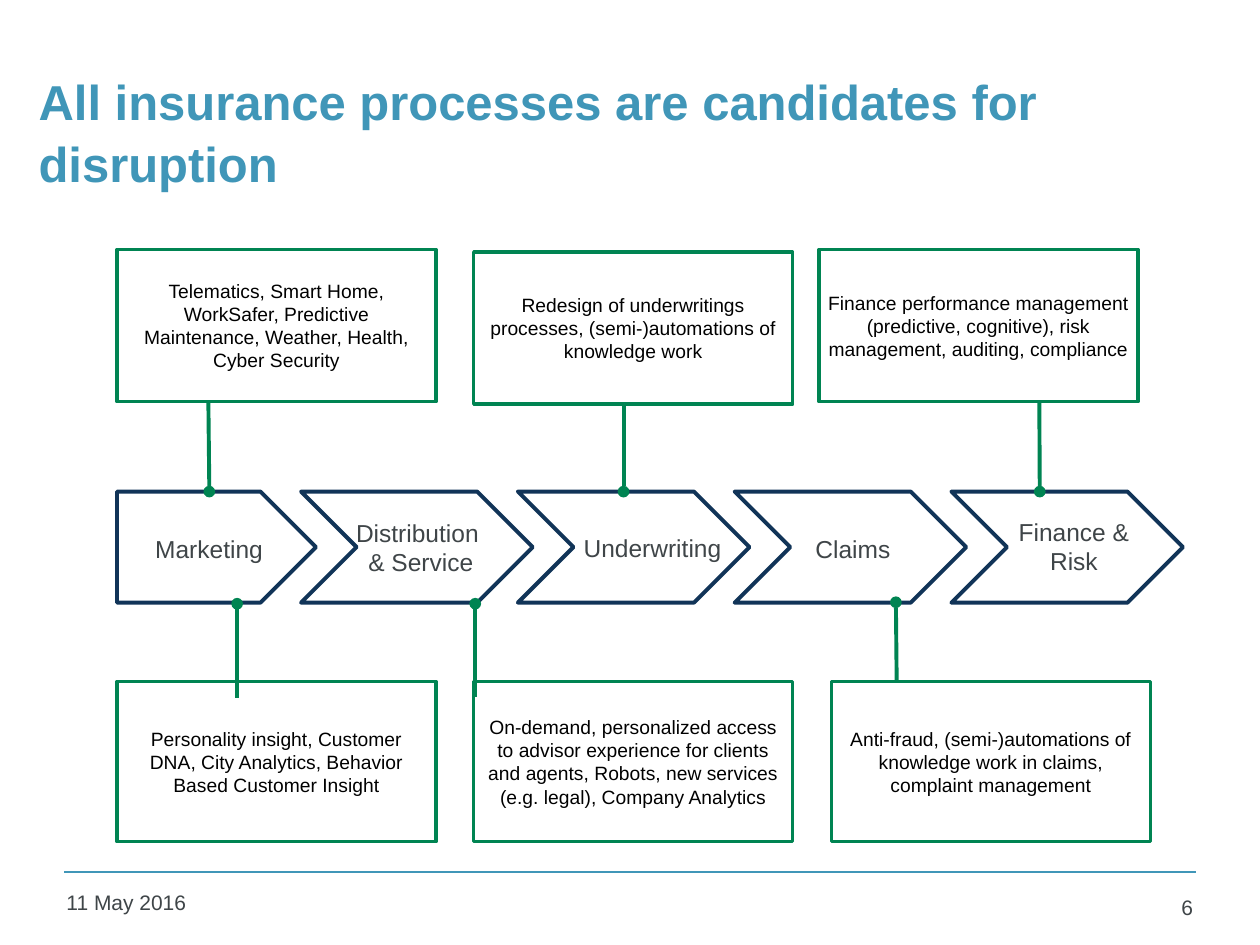
from lxml import etree
from pptx import Presentation
from pptx.dml.color import RGBColor
from pptx.enum.shapes import MSO_CONNECTOR, MSO_SHAPE
from pptx.enum.text import MSO_ANCHOR, PP_ALIGN
from pptx.oxml.ns import qn
from pptx.util import Cm, Pt

STRAIGHT = MSO_CONNECTOR.STRAIGHT
RECTANGLE, PENTAGON, CHEVRON = MSO_SHAPE.RECTANGLE, MSO_SHAPE.PENTAGON, MSO_SHAPE.CHEVRON
TOP, MIDDLE = MSO_ANCHOR.TOP, MSO_ANCHOR.MIDDLE
LEFT, CENTER, RIGHT = PP_ALIGN.LEFT, PP_ALIGN.CENTER, PP_ALIGN.RIGHT

COLORS = {"white": "FFFFFF", "black": "000000", "gray": "3F4548",
          "blue": "4096B8", "navy": "113458", "green": "008452"}
FONT = "Arial"

# All places are in centimetres.
TITLE = "All insurance processes are candidates for disruption"
DATE, PAGE = "11 May 2016", "6"

# Process steps: label lines, label box (left, top, width, height)
STEPS = [
    (["Marketing"], (2.36, 10.64, 3.71, 0.86)),
    (["Distribution ", "& Service"], (6.76, 10.31, 3.45, 1.45)),
    (["Underwriting"], (11.43, 10.62, 3.45, 0.86)),
    (["Claims"], (15.47, 10.64, 3.45, 0.86)),
    (["Finance & Risk"], (20.14, 10.29, 3.02, 1.45)),
]
STEP_TOP, STEP_HEIGHT = 9.91, 2.24
FIRST_LEFT, FIRST_WIDTH = 2.36, 4.01
CHEVRON_LEFT, CHEVRON_WIDTH, CHEVRON_PITCH = 6.07, 4.67, 4.37

# Ideas: text, left, top
IDEA_WIDTH = 6.43
UPPER_HEIGHT, LOWER_HEIGHT = 3.07, 3.23
UPPER_IDEAS = [
    ("Telematics, Smart Home, WorkSafer, Predictive Maintenance, Weather, "
     "Health, Cyber Security", 2.36, 5.03),
    ("Redesign of underwritings processes, (semi-)automations of knowledge work",
     9.55, 5.08),
    ("Finance performance management (predictive, cognitive), risk management, "
     "auditing, compliance", 16.51, 5.03),
]
LOWER_IDEAS = [
    ("Personality insight, Customer DNA, City Analytics, Behavior Based "
     "Customer Insight", 2.36, 13.74),
    ("On-demand, personalized access to advisor experience for clients and "
     "agents, Robots, new services (e.g. legal), Company Analytics", 9.55, 13.74),
    ("Anti-fraud, (semi-)automations of knowledge work in claims, complaint "
     "management", 16.76, 13.74),
]

# Links from idea to step: start x, start y, end x, end y
LINKS_BEHIND = [(18.08, 14.05, 18.06, 12.14), (12.57, 7.72, 12.57, 9.91),
                (20.95, 7.82, 20.96, 9.91), (4.19, 7.16, 4.22, 9.91)]
LINKS_IN_FRONT = [(4.78, 14.07, 4.78, 12.17), (9.58, 14.05, 9.58, 12.17)]


def rgb(color):
    return RGBColor.from_string(COLORS[color])


def write(shape, lines, size, color, align=CENTER, anchor=MIDDLE, bold=False,
          spacing=1.0, inset=(0.25, 0.13)):
    frame = shape.text_frame
    across, down = (Cm(length) for length in inset)
    frame_format = {"word_wrap": True, "vertical_anchor": anchor,
                    "margin_left": across, "margin_right": across,
                    "margin_top": down, "margin_bottom": down}
    for name, value in frame_format.items():
        setattr(frame, name, value)
    for number, line in enumerate(lines):
        paragraph = frame.add_paragraph() if number else frame.paragraphs[0]
        paragraph.alignment = align
        paragraph.line_spacing = spacing
        run = paragraph.add_run()
        run.text = line
        for name, value in {"name": FONT, "size": Pt(size), "bold": bold}.items():
            setattr(run.font, name, value)
        run.font.color.rgb = rgb(color)


def add_text(slide, place, lines, size, color, **text_format):
    box = slide.shapes.add_textbox(*map(Cm, place))
    write(box, lines, size, color, **text_format)


def add_outlined(slide, preset, place, color, width):
    shape = slide.shapes.add_shape(preset, *map(Cm, place))
    shape.shadow.inherit = False
    shape.fill.solid()
    shape.fill.fore_color.rgb = rgb("white")
    shape.line.color.rgb = rgb(color)
    shape.line.width = Pt(width)
    return shape


def add_line(slide, ends, color, width, dot=False):
    """Draw a straight line, with a round dot at its end if asked."""
    line = slide.shapes.add_connector(STRAIGHT, *map(Cm, ends))
    line.line.color.rgb = rgb(color)
    line.line.width = Pt(width)
    properties = line._element.spPr
    if dot:
        etree.SubElement(properties.find(qn("a:ln")), qn("a:tailEnd"), type="oval")
    etree.SubElement(properties, qn("a:effectLst"))


def add_steps(slide):
    add_outlined(slide, PENTAGON, (FIRST_LEFT, STEP_TOP, FIRST_WIDTH, STEP_HEIGHT),
                 "navy", 2.25)
    for number in range(len(STEPS) - 1):
        left = CHEVRON_LEFT + number * CHEVRON_PITCH
        add_outlined(slide, CHEVRON, (left, STEP_TOP, CHEVRON_WIDTH, STEP_HEIGHT),
                     "navy", 2.25)
    for lines, place in STEPS:
        add_text(slide, place, lines, 14, "gray")


def add_ideas(slide, ideas, height):
    for text, left, top in ideas:
        box = add_outlined(slide, RECTANGLE, (left, top, IDEA_WIDTH, height), "green", 2)
        write(box, [text], 11, "black", inset=(0.18, 0.1))


def add_links(slide, links):
    for ends in links:
        add_line(slide, ends, "green", 2.25, dot=True)


def main():
    deck = Presentation()
    deck.slide_width, deck.slide_height = Cm(25.4), Cm(19.05)
    slide = deck.slides.add_slide(deck.slide_layouts[6])

    add_line(slide, (1.3, 17.58, 24.1, 17.58), "blue", 1)
    add_steps(slide)
    add_links(slide, LINKS_BEHIND)
    add_ideas(slide, UPPER_IDEAS, UPPER_HEIGHT)
    add_ideas(slide, LOWER_IDEAS, LOWER_HEIGHT)
    add_links(slide, LINKS_IN_FRONT)
    add_text(slide, (0.53, 1.52, 23.34, 2.21), [TITLE], 28, "blue",
             align=LEFT, bold=True, spacing=1.05)
    add_text(slide, (22.5, 17.91, 1.8, 0.94), [PAGE], 12, "gray",
             align=RIGHT, anchor=TOP)
    add_text(slide, (1.09, 17.81, 5.59, 0.91), [DATE], 12, "gray",
             align=LEFT, anchor=TOP)
    deck.save("out.pptx")


if __name__ == "__main__":
    main()
